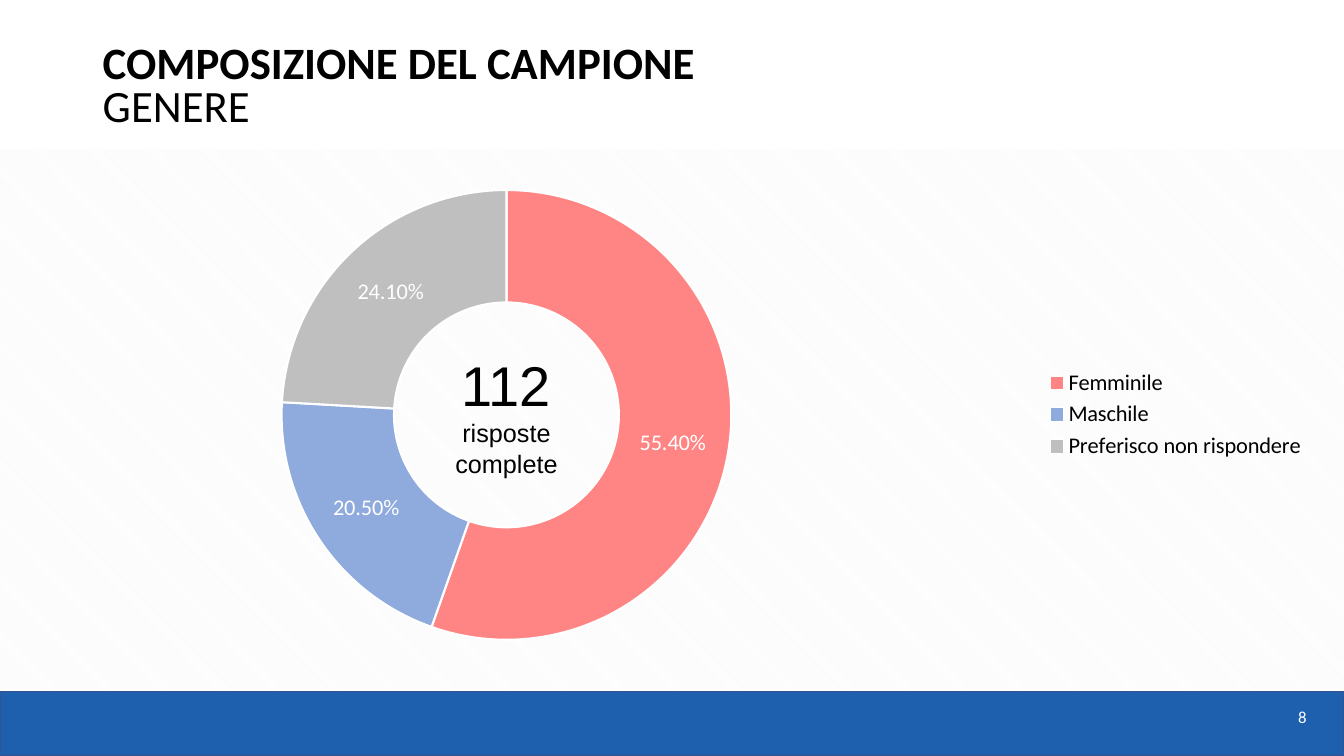
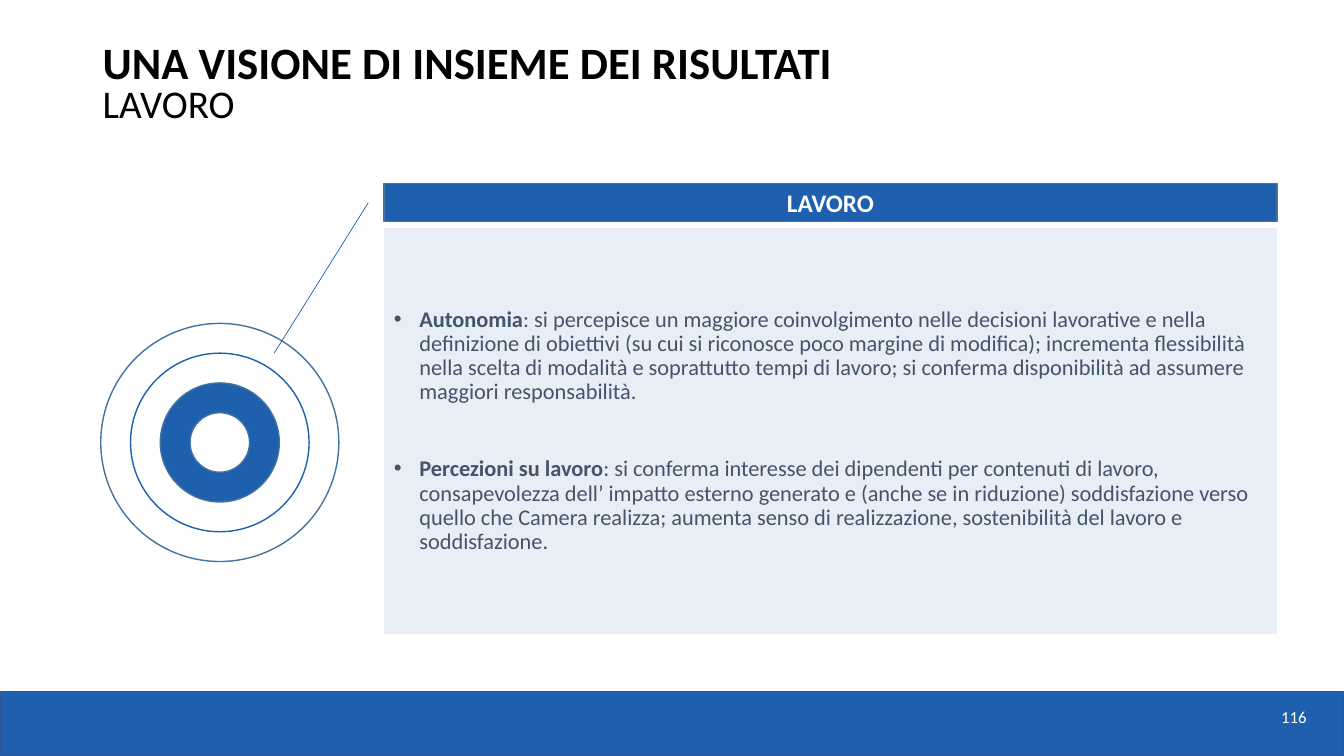
from lxml import etree
from pptx import Presentation
from pptx.chart.data import CategoryChartData
from pptx.dml.color import RGBColor
from pptx.enum.chart import XL_CHART_TYPE, XL_LEGEND_POSITION
from pptx.enum.dml import MSO_PATTERN
from pptx.enum.shapes import MSO_CONNECTOR, MSO_SHAPE
from pptx.enum.text import MSO_ANCHOR, MSO_AUTO_SIZE, PP_ALIGN
from pptx.oxml.ns import qn
from pptx.util import Cm, Pt

RECT, OVAL = MSO_SHAPE.RECTANGLE, MSO_SHAPE.OVAL
STRAIGHT = MSO_CONNECTOR.STRAIGHT
DOUGHNUT = XL_CHART_TYPE.DOUGHNUT
LEGEND_RIGHT = XL_LEGEND_POSITION.RIGHT
DIAGONALS = MSO_PATTERN.LIGHT_DOWNWARD_DIAGONAL
TOP, MIDDLE = MSO_ANCHOR.TOP, MSO_ANCHOR.MIDDLE
LEFT, CENTER, RIGHT = PP_ALIGN.LEFT, PP_ALIGN.CENTER, PP_ALIGN.RIGHT
GROW = MSO_AUTO_SIZE.SHAPE_TO_FIT_TEXT

BLUE = RGBColor(0x1E, 0x5F, 0xAE)
BAND_EDGE = RGBColor(0x32, 0x54, 0x91)
EDGE = RGBColor(0x43, 0x73, 0x9E)
WHITE = RGBColor(0xFF, 0xFF, 0xFF)
BLACK = RGBColor(0x00, 0x00, 0x00)
SLATE = RGBColor(0x44, 0x54, 0x6A)
STRIPE = RGBColor(0xF2, 0xF2, 0xF2)
PINK = RGBColor(0xFF, 0x85, 0x85)
SKY = RGBColor(0x8F, 0xAA, 0xDC)
GREY = RGBColor(0xBF, 0xBF, 0xBF)

SANS, CENTER_FONT = "Calibri", "Arial"
W, H = 33.87, 19.05
MARGIN, CONTENT_W = 2.34, 30.84

GENDERS = [("Femminile", 0.554, PINK), ("Maschile", 0.205, SKY),
           ("Preferisco non rispondere", 0.241, GREY)]
FINDINGS = [
    ("Autonomia",
     ": si percepisce un maggiore coinvolgimento nelle decisioni lavorative e nella "
     "definizione di obiettivi (su cui si riconosce poco margine di modifica); incrementa "
     "flessibilità nella scelta di modalità e soprattutto tempi di lavoro; si conferma "
     "disponibilità ad assumere maggiori responsabilità."),
    ("Percezioni su lavoro",
     ": si conferma interesse dei dipendenti per contenuti di lavoro, consapevolezza dell’ "
     "impatto esterno generato e (anche se in riduzione) soddisfazione verso quello che "
     "Camera realizza; aumenta senso di realizzazione, sostenibilità del lavoro e "
     "soddisfazione."),
]


def set_font(font, size, color, bold=False, name=SANS):
    """Set the look of a run or chart font."""
    font.name, font.size, font.bold = name, Pt(size), bold
    font.color.rgb = color


def add_run(p, text, size, color, bold=False, name=SANS):
    """Append one formatted run to a paragraph."""
    r = p.add_run()
    r.text = text
    set_font(r.font, size, color, bold, name)


def add_shape(s, kind, x, y, w, h, fill=None, line=None):
    """Add a flat preset shape measured in centimetres."""
    sp = s.shapes.add_shape(kind, Cm(x), Cm(y), Cm(w), Cm(h))
    sp.shadow.inherit = False
    if fill is not None:
        sp.fill.solid()
        sp.fill.fore_color.rgb = fill
    if line is None:
        sp.line.fill.background()
    else:
        sp.line.color.rgb = line
        sp.line.width = Pt(1)
    return sp


def add_text(s, x, y, w, h, align=LEFT, anchor=TOP):
    """Add a wrapping text box and return its frame and first paragraph."""
    tf = s.shapes.add_textbox(Cm(x), Cm(y), Cm(w), Cm(h)).text_frame
    tf.word_wrap = True
    tf.vertical_anchor = anchor
    p = tf.paragraphs[0]
    p.alignment = align
    return tf, p


def add_base_slide(prs, title, subtitle, number, subtitle_size=32):
    """Add a slide with the footer band, page number and two-line title."""
    s = prs.slides.add_slide(prs.slide_layouts[6])
    add_shape(s, RECT, 0, 17.42, W, H - 17.42, BLUE, BAND_EDGE)
    _, p = add_text(s, 27.08, 17.37, 6.1, 1.47, RIGHT, MIDDLE)
    p.line_spacing = 0.8
    add_run(p, number, 12, WHITE)
    _, p = add_text(s, MARGIN, 1.02, CONTENT_W, 1.75)
    p.line_spacing = 0.8
    add_run(p, title, 32, BLACK, True)
    p.add_line_break()
    add_run(p, subtitle, subtitle_size, BLACK)
    return s


def set_plot_layout(chart, plot):
    """Fix the inner plot area at fractions of the chart frame."""
    area = chart.plots[0]._element.getparent()
    for old in area.findall(qn("c:layout")):
        area.remove(old)
    layout = etree.Element(qn("c:layout"))
    manual = etree.SubElement(layout, qn("c:manualLayout"))
    settings = [("layoutTarget", "inner"), ("xMode", "edge"), ("yMode", "edge")]
    for tag, value in settings + list(zip("xywh", plot)):
        etree.SubElement(manual, qn("c:" + tag)).set("val", str(value))
    area.insert(0, layout)


def add_gender_chart(s, x, y, w, h):
    """Draw the doughnut with its legend and the count in its hole."""
    plot = (0.154, 0.091, 0.368, 0.819)
    data = CategoryChartData(number_format="0.00%")
    data.categories = [name for name, _, _ in GENDERS]
    data.add_series("Series 1", [value for _, value, _ in GENDERS])
    chart = s.shapes.add_chart(DOUGHNUT, Cm(x), Cm(y), Cm(w), Cm(h), data).chart
    set_font(chart.font, 10, BLACK)
    chart.has_title = False
    chart.has_legend = True
    chart.legend.position = LEGEND_RIGHT
    chart.legend.include_in_layout = False
    set_font(chart.legend.font, 16, BLACK)
    set_plot_layout(chart, plot)

    doughnut = chart.plots[0]
    doughnut.vary_by_categories = True
    for i, (_, _, color) in enumerate(GENDERS):
        fmt = doughnut.series[0].points[i].format
        fmt.fill.solid()
        fmt.fill.fore_color.rgb = color
        fmt.line.color.rgb = WHITE
        fmt.line.width = Pt(1.5)
    doughnut.has_data_labels = True
    labels = doughnut.data_labels
    labels.show_value, labels.show_percentage = True, False
    labels.number_format, labels.number_format_is_linked = "0.00%", False
    set_font(labels.font, 16, WHITE)

    box_w, box_h = 4.88, 3.5
    cx = x + w * (plot[0] + plot[2] / 2)
    cy = y + h * (plot[1] + plot[3] / 2)
    tf, p = add_text(s, cx - box_w / 2, cy - box_h / 2, box_w, box_h, CENTER)
    tf.auto_size = GROW
    add_run(p, "112", 40, BLACK, name=CENTER_FONT)
    p = tf.add_paragraph()
    p.alignment = CENTER
    add_run(p, "risposte complete", 18, BLACK, name=CENTER_FONT)


def add_target(s, x, y, size):
    """Draw four concentric rings, each a quarter of the size smaller."""
    step = size / 8
    styles = [(WHITE, EDGE), (WHITE, BLUE), (BLUE, EDGE), (WHITE, EDGE)]
    for i, (fill, line) in enumerate(styles):
        d = size - 2 * i * step
        add_shape(s, OVAL, x + i * step, y + i * step, d, d, fill, line)


def add_bullet(p):
    """Give a paragraph a hanging bullet."""
    pPr = p._p.get_or_add_pPr()
    pPr.set("marL", str(Cm(0.64)))
    pPr.set("indent", str(-Cm(0.64)))
    etree.SubElement(pPr, qn("a:buFont")).set("typeface", CENTER_FONT)
    etree.SubElement(pPr, qn("a:buChar")).set("char", "•")


def add_findings(s, x, y, w, h):
    """Draw the heading bar and the tinted panel of findings."""
    bar_h, gap = 0.97, 0.15
    top = y + bar_h + gap
    sp = add_shape(s, RECT, x, top, w, h - bar_h - gap, BLUE)
    color = sp.fill._xPr.find(qn("a:solidFill"))[0]
    etree.SubElement(color, qn("a:alpha")).set("val", "10000")
    tf = sp.text_frame
    tf.word_wrap = True
    tf.vertical_anchor = MIDDLE
    for i, (lead, body) in enumerate(FINDINGS):
        p = tf.add_paragraph() if i else tf.paragraphs[0]
        p.alignment = LEFT
        p.line_spacing = 0.9
        p.space_before = Pt(38 if i else 10)
        add_bullet(p)
        add_run(p, lead, 16, SLATE, True)
        add_run(p, body, 16, SLATE)
    bar = add_shape(s, RECT, x, y, w, bar_h, BLUE, EDGE)
    bar.text_frame.vertical_anchor = MIDDLE
    p = bar.text_frame.paragraphs[0]
    p.alignment = CENTER
    add_run(p, "LAVORO", 18, WHITE, True)


def add_leader(s, x1, y1, x2, y2):
    """Draw the thin line from the target to the heading bar."""
    line = s.shapes.add_connector(STRAIGHT, Cm(x1), Cm(y1), Cm(x2), Cm(y2))
    line.line.color.rgb = BLUE
    line.line.width = Pt(0.5)
    etree.SubElement(line._element.spPr, qn("a:effectLst"))


def build_sample_slide(prs):
    """Build the slide on the gender of the sample."""
    s = add_base_slide(prs, "COMPOSIZIONE DEL CAMPIONE", "GENERE", "8")
    panel = add_shape(s, RECT, 0, 3.76, W, 13.61)
    panel.fill.patterned()
    panel.fill.pattern = DIAGONALS
    panel.fill.fore_color.rgb = STRIPE
    panel.fill.back_color.rgb = WHITE
    add_gender_chart(s, MARGIN, 3.53, CONTENT_W, 13.84)


def build_results_slide(prs):
    """Build the overview slide on work."""
    s = add_base_slide(prs, "UNA VISIONE DI INSIEME DEI RISULTATI", "LAVORO", "116", 28)
    x, y, size = 2.54, 8.15, 6
    panel_x, panel_y = 9.68, 4.62
    add_target(s, x, y, size)
    add_findings(s, panel_x, panel_y, 22.5, 11.36)
    add_leader(s, x + 4.37, y + size / 8, panel_x - 0.4, panel_y + 0.49)


def main():
    """Build and save the presentation."""
    prs = Presentation()
    prs.slide_width, prs.slide_height = Cm(W), Cm(H)
    build_sample_slide(prs)
    build_results_slide(prs)
    prs.save("out.pptx")


if __name__ == "__main__":
    main()
